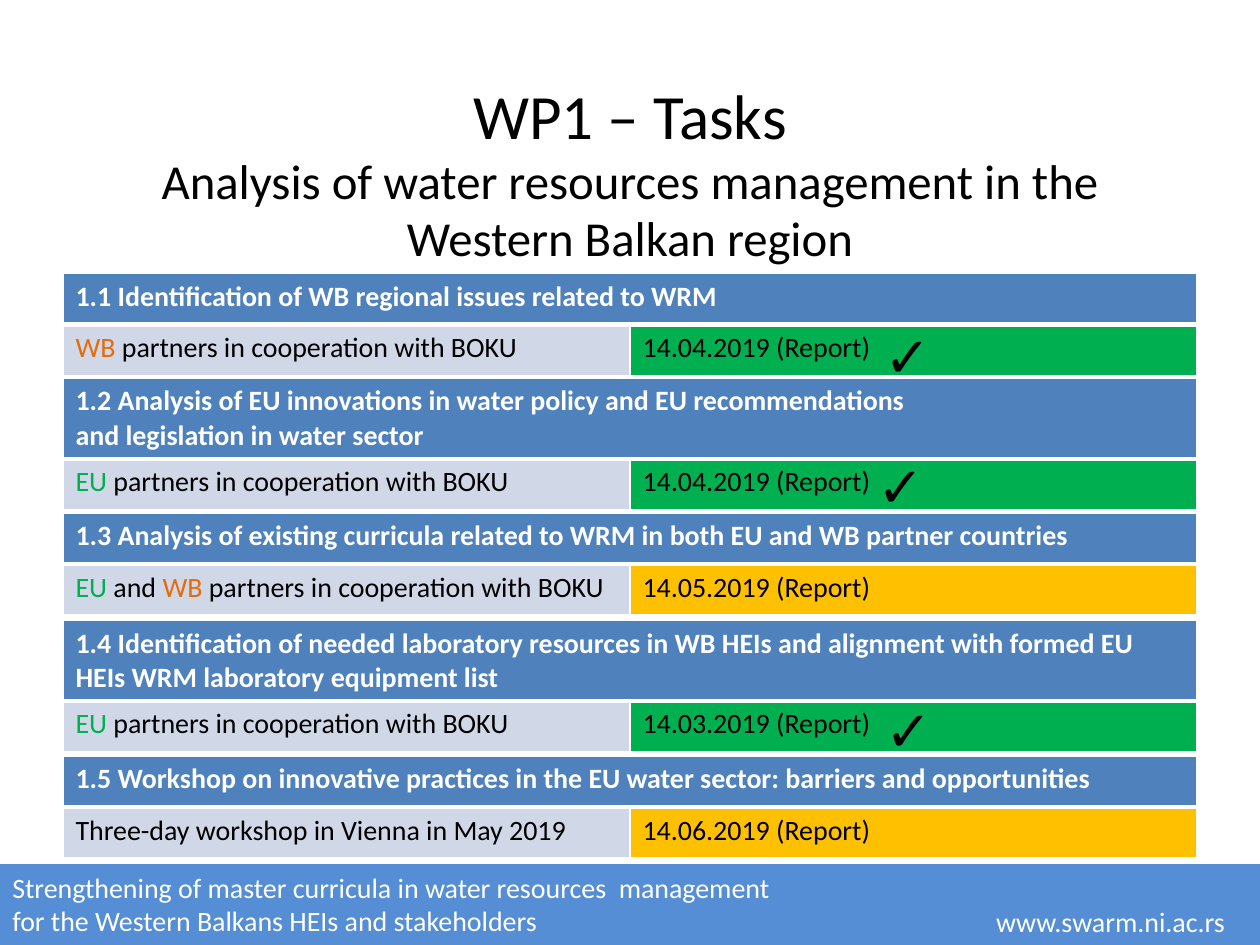
from pptx import Presentation
from pptx.dml.color import RGBColor
from pptx.enum.shapes import MSO_SHAPE as Shape
from pptx.enum.text import MSO_ANCHOR as Anchor, PP_ALIGN as Align
from pptx.oxml import parse_xml
from pptx.oxml.ns import nsdecls
from pptx.util import Cm, Pt

COLORS = {
    "white": "FFFFFF", "black": "000000", "footer": "558ED5",
    "header": "4F81BD", "partner": "D0D8E8", "done": "00B050",
    "pending": "FFC000", "EU": "00B050", "WB": "E46C0A",
}
LEFT, WIDTH = 1.27, 22.86
ROW, TALL_ROW = 1.03, 1.63
BODY = {"size": Pt(16), "name": "Calibri", "bold": False}
HEADER = {**BODY, "bold": True}
CHECK = {"size": Pt(32), "name": "Arial"}

EU, WB = ("EU", "EU"), ("WB", "WB")
PARTNERS = (" partners in cooperation with BOKU", "black")
# top, header, header height, partner spans, date, status
TASKS = [
    (5.51, "1.1 Identification of WB regional issues related to WRM",
     ROW, [WB, PARTNERS], "14.04.2019", "done"),
    (7.62, "1.2 Analysis of EU innovations in water policy and EU recommendations \n"
     "and legislation in water sector",
     TALL_ROW, [EU, PARTNERS], "14.04.2019", "done"),
    (10.34, "1.3 Analysis of existing curricula related to WRM in both EU and WB partner countries",
     ROW, [EU, (" and ", "black"), WB, PARTNERS], "14.05.2019", "pending"),
    (12.5, "1.4 Identification of needed laboratory resources in WB HEIs and alignment "
     "with formed EU HEIs WRM laboratory equipment list",
     TALL_ROW, [EU, PARTNERS], "14.03.2019", "done"),
    (15.24, "1.5 Workshop on innovative practices in the EU water sector: barriers and opportunities",
     ROW, [("Three-day workshop in Vienna in May 2019", "black")], "14.06.2019", "pending"),
]
CHECKS = [(17.58, 6.35), (17.45, 8.97), (17.6, 13.89)]


def rgb(name):
    return RGBColor.from_string(COLORS[name])


def add_span(para, text, color, style):
    """Add one run per line, with line breaks between them."""
    for number, line in enumerate(text.split("\n")):
        if number:
            para.add_line_break()
        span = para.add_run()
        span.text = line
        span.font.color.rgb = rgb(color)
        for key, value in style.items():
            setattr(span.font, key, value)


def add_text(page, left, top, width, height, wrap=True):
    frame = page.shapes.add_textbox(Cm(left), Cm(top), Cm(width), Cm(height)).text_frame
    frame.word_wrap = wrap
    return frame


def add_title(page):
    frame = add_text(page, LEFT, 2.34, WIDTH, 2.34)
    frame.vertical_anchor = Anchor.MIDDLE
    para = frame.paragraphs[0]
    para.alignment = Align.CENTER
    para.line_spacing = 0.97
    add_span(para, "WP1 – Tasks", "black", {"size": Pt(36), "name": "Calibri"})
    para.add_line_break()
    add_span(para, "Analysis of water resources management in the Western Balkan region",
             "black", {"size": Pt(27.9), "name": "Calibri"})


def add_footer(page):
    bar = page.shapes.add_shape(Shape.FLOWCHART_PROCESS, 0, Cm(17.42), Cm(25.4), Cm(1.63))
    bar.shadow.inherit = False
    bar.fill.solid()
    bar.fill.fore_color.rgb = rgb("footer")
    bar.line.fill.background()

    project = add_text(page, 0, 17.42, 16.92, 1.63)
    add_span(project.paragraphs[0],
             "Strengthening of master curricula in water resources  management", "white", BODY)
    add_span(project.add_paragraph(),
             "for the Western Balkans HEIs and stakeholders", "white", BODY)

    site = add_text(page, 19.69, 18.03, 5.49, 1.02, wrap=False).paragraphs[0]
    add_span(site, " ", "black", {**BODY, "size": Pt(18)})
    add_span(site, "www.swarm.ni.ac.rs", "white", BODY)


def set_borders(cell, bottom=1, top=1):
    """Draw white borders; widths are in points."""
    props = cell._tc.get_or_add_tcPr()
    widths = {"lnL": 1, "lnR": 1, "lnT": top, "lnB": bottom}
    for position, (side, width) in enumerate(widths.items()):
        props.insert(position, parse_xml(
            f'<a:{side} {nsdecls("a")} w="{Pt(width)}"><a:solidFill>'
            f'<a:srgbClr val="{COLORS["white"]}"/></a:solidFill></a:{side}>'))


def fill_cell(cell, spans, fill, style):
    cell.fill.solid()
    cell.fill.fore_color.rgb = rgb(fill)
    for text, color in spans:
        add_span(cell.text_frame.paragraphs[0], text, color, style)


def add_task(page, top, header, header_height, partners, date, status):
    table = page.shapes.add_table(2, 2, Cm(LEFT), Cm(top), Cm(WIDTH),
                                  Cm(header_height + ROW)).table
    table.rows[0].height = Cm(header_height)
    table.rows[1].height = Cm(ROW)
    table.cell(0, 0).merge(table.cell(0, 1))
    fill_cell(table.cell(0, 0), [(header, "white")], "header", HEADER)
    fill_cell(table.cell(1, 0), partners, "partner", BODY)
    fill_cell(table.cell(1, 1), [(f"{date} (Report)", "black")], status, BODY)
    for column in range(2):
        set_borders(table.cell(0, column), bottom=3)
        set_borders(table.cell(1, column), top=3)


def add_check(page, left, top):
    frame = add_text(page, left, top, 1.4, 1.63, wrap=False)
    add_span(frame.paragraphs[0], "✓", "black", CHECK)


def main():
    deck = Presentation()
    deck.slide_width, deck.slide_height = Cm(25.4), Cm(19.05)
    page = deck.slides.add_slide(deck.slide_layouts[6])
    add_footer(page)
    add_title(page)
    for task in TASKS:
        add_task(page, *task)
    for left, top in CHECKS:
        add_check(page, left, top)
    deck.save("out.pptx")


if __name__ == "__main__":
    main()
